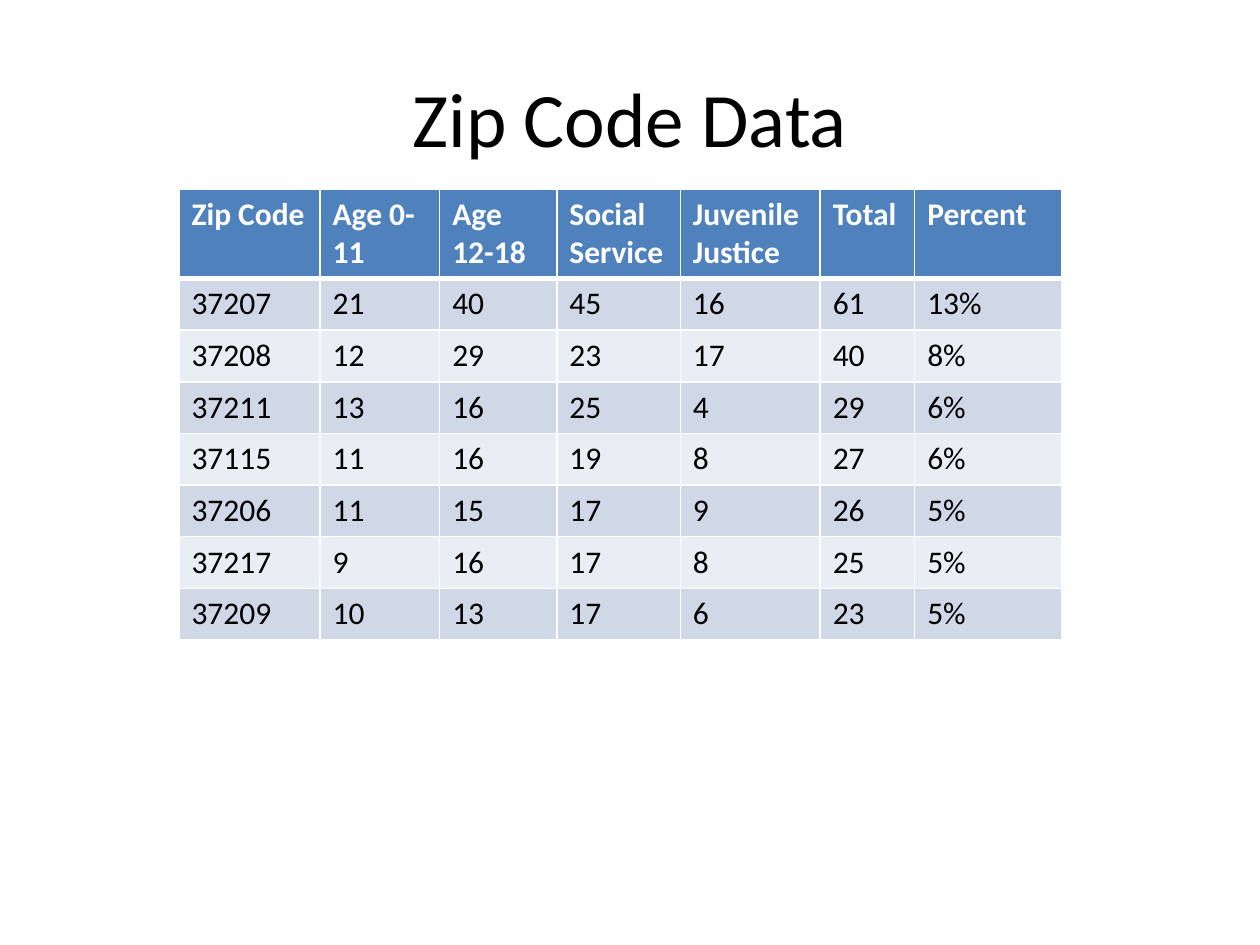
from lxml.etree import SubElement
from pptx import Presentation
from pptx.dml.color import RGBColor
from pptx.enum.text import MSO_ANCHOR as Anchor, PP_ALIGN as Align
from pptx.oxml.ns import qn
from pptx.util import Inches, Pt

HEADERS = ["Zip Code", "Age 0-11", "Age 12-18", "Social Service",
           "Juvenile Justice", "Total", "Percent"]
ZIP_ROWS = [
    ["37207", "21", "40", "45", "16", "61", "13%"],
    ["37208", "12", "29", "23", "17", "40", "8%"],
    ["37211", "13", "16", "25", "4", "29", "6%"],
    ["37115", "11", "16", "19", "8", "27", "6%"],
    ["37206", "11", "15", "17", "9", "26", "5%"],
    ["37217", "9", "16", "17", "8", "25", "5%"],
    ["37209", "10", "13", "17", "6", "23", "5%"],
]
COLUMN_WIDTHS = [1.12, 0.95, 0.93, 0.98, 1.11, 0.75, 1.17]
HEADER_HEIGHT = 0.69
ROW_HEIGHT = 0.41
HEADER_FILL = "4F81BD"
BAND_FILLS = ["D0D8E8", "E9EDF4"]


def color(value):
    return RGBColor.from_string(value)


def write_text(frame, text, size=18, fill="000000", bold=False, align=Align.LEFT):
    para = frame.paragraphs[0]
    para.alignment = align
    span = para.add_run()
    span.text = text
    span.font.name = "Calibri"
    span.font.size = Pt(size)
    span.font.bold = bold
    span.font.color.rgb = color(fill)


def set_borders(cell, top=1, bottom=1):
    properties = cell._tc.get_or_add_tcPr()
    widths = {"a:lnL": 1, "a:lnR": 1, "a:lnT": top, "a:lnB": bottom}
    for tag, width in widths.items():
        line = SubElement(properties, qn(tag), w=str(Pt(width)))
        solid = SubElement(line, qn("a:solidFill"))
        SubElement(solid, qn("a:srgbClr"), val="FFFFFF")


def fill_cell(cell, text, background, top=1, bottom=1, **text_format):
    set_borders(cell, top, bottom)
    cell.fill.solid()
    cell.fill.fore_color.rgb = color(background)
    write_text(cell.text_frame, text, **text_format)


def add_title(page, text):
    title = page.shapes.title
    title.left, title.top = Inches(0.5), Inches(0.3)
    title.width, title.height = Inches(9), Inches(1.25)
    title.text_frame.vertical_anchor = Anchor.MIDDLE
    write_text(title.text_frame, text, size=44, align=Align.CENTER)


def add_zip_table(page):
    height = HEADER_HEIGHT + ROW_HEIGHT * len(ZIP_ROWS)
    table = page.shapes.add_table(
        len(ZIP_ROWS) + 1, len(HEADERS),
        Inches(1.42), Inches(1.5), Inches(sum(COLUMN_WIDTHS)), Inches(height)).table
    for column, width in zip(table.columns, COLUMN_WIDTHS):
        column.width = Inches(width)
    for index, row in enumerate(table.rows):
        row.height = Inches(ROW_HEIGHT if index else HEADER_HEIGHT)

    for cell, text in zip(table.rows[0].cells, HEADERS):
        fill_cell(cell, text, HEADER_FILL, bottom=3, fill="FFFFFF", bold=True)
    for index, values in enumerate(ZIP_ROWS):
        for cell, text in zip(table.rows[index + 1].cells, values):
            fill_cell(cell, text, BAND_FILLS[index % 2], top=1 if index else 3)


def main():
    deck = Presentation()
    deck.slide_width, deck.slide_height = Inches(10), Inches(7.5)
    page = deck.slides.add_slide(deck.slide_layouts[5])
    add_title(page, "Zip Code Data")
    add_zip_table(page)
    deck.save("out.pptx")


if __name__ == "__main__":
    main()
